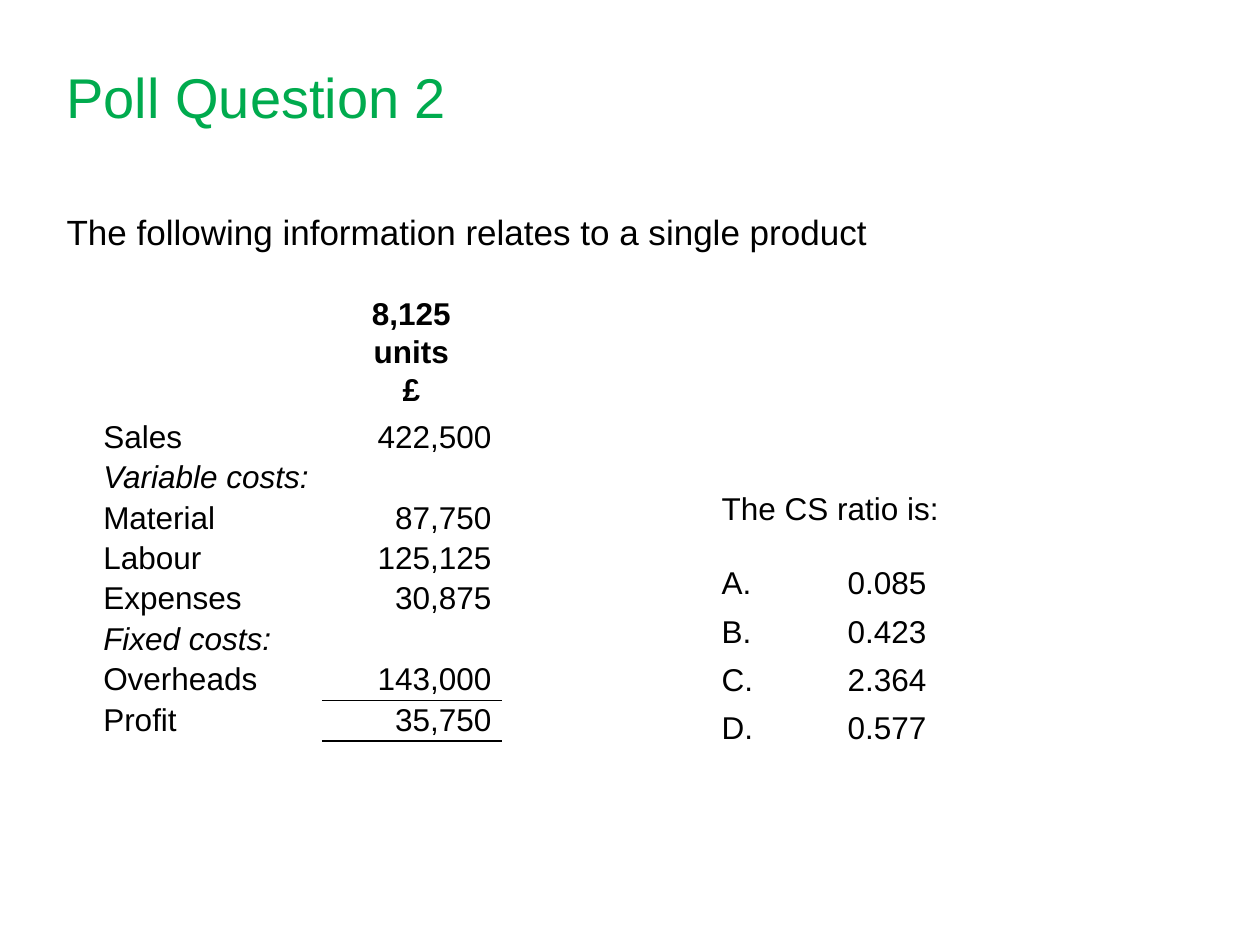
from dataclasses import dataclass

from lxml import etree
from pptx import Presentation
from pptx.dml.color import RGBColor
from pptx.enum.text import MSO_ANCHOR, PP_ALIGN
from pptx.oxml.ns import qn
from pptx.util import Inches, Pt

LEFT, CENTER, RIGHT = PP_ALIGN.LEFT, PP_ALIGN.CENTER, PP_ALIGN.RIGHT
TOP, MIDDLE = MSO_ANCHOR.TOP, MSO_ANCHOR.MIDDLE


@dataclass(frozen=True)
class Theme:
    font: str = "Arial"
    title_color: str = "00AB4E"
    text_color: str = "000000"
    title_size: int = 32
    lead_size: int = 20
    text_size: int = 18
    line_spacing: float = 1.07
    rule_width: int = 1


@dataclass(frozen=True)
class Box:
    left: float
    top: float
    width: float
    height: float

    def lengths(self) -> tuple:
        return tuple(map(Inches, (self.left, self.top, self.width, self.height)))


@dataclass(frozen=True)
class CostLine:
    label: str
    amount: str = ""
    heading: bool = False
    rules: str = ""  # sides of the amount cell that carry a rule: T, B


THEME = Theme()
TITLE_BOX = Box(0.43, 0.13, 9.13, 1.26)
LEAD_BOX = Box(0.43, 1.62, 9.13, 0.5)
ANSWER_BOX = Box(5.63, 3.83, 3.94, 2.17)
COLUMN_WIDTHS = (1.81, 1.42)
HEADER_HEIGHT, ROW_HEIGHT = 0.97, 0.32
TABLE_LEFT, TABLE_TOP = 0.75, 2.34
ANSWER_TAB = 1.0

COST_LINES = (
    CostLine("Sales", "422,500"),
    CostLine("Variable costs:", heading=True),
    CostLine("Material", "87,750"),
    CostLine("Labour", "125,125"),
    CostLine("Expenses", "30,875"),
    CostLine("Fixed costs:", heading=True),
    CostLine("Overheads", "143,000", rules="B"),
    CostLine("Profit", "35,750", rules="TB"),
)
ANSWERS = ("0.085", "0.423", "2.364", "0.577")


def style_font(paragraph, size: int, color: str, bold=False, italic=False) -> None:
    for run in paragraph.runs:
        font = run.font
        font.name, font.size = THEME.font, Pt(size)
        font.bold, font.italic = bold, italic
        font.color.rgb = RGBColor.from_string(color)


def add_text(slide, box: Box, text: str, size: int, color: str, anchor=TOP):
    text_frame = slide.shapes.add_textbox(*box.lengths()).text_frame
    text_frame.word_wrap = True
    text_frame.vertical_anchor = anchor
    text_frame.text = text
    for paragraph in text_frame.paragraphs:
        style_font(paragraph, size, color)
    return text_frame


def add_tab(paragraph, position: float) -> None:
    tab_list = etree.SubElement(paragraph._p.get_or_add_pPr(), qn("a:tabLst"))
    etree.SubElement(tab_list, qn("a:tab"), pos=str(Inches(position)), algn="l")


def add_answers(slide) -> None:
    options = [f"{letter}.\t{value}" for letter, value in zip("ABCD", ANSWERS)]
    text_frame = add_text(slide, ANSWER_BOX, "\n".join(["The CS ratio is:", *options]),
                          THEME.text_size, THEME.text_color)
    question, *choices = text_frame.paragraphs
    question.space_after = Pt(21)
    for choice in choices:
        add_tab(choice, ANSWER_TAB)
        choice.space_after = Pt(6)


def add_rule(cell, side: str) -> None:
    line = etree.SubElement(cell._tc.get_or_add_tcPr(), qn(f"a:ln{side}"),
                            w=str(Pt(THEME.rule_width)))
    fill = etree.SubElement(line, qn("a:solidFill"))
    etree.SubElement(fill, qn("a:srgbClr"), val=THEME.text_color)


def fill_cell(cell, text: str, align, bold=False, italic=False, rules="") -> None:
    for side in rules:
        add_rule(cell, side)
    cell.fill.background()
    cell.margin_left, cell.margin_right = Inches(0.07), Inches(0.08)
    cell.margin_top = cell.margin_bottom = 0
    cell.text_frame.text = text
    for paragraph in cell.text_frame.paragraphs:
        paragraph.alignment = align
        paragraph.line_spacing = THEME.line_spacing
        paragraph.font.size = Pt(THEME.text_size)
        style_font(paragraph, THEME.text_size, THEME.text_color, bold, italic)


def add_cost_table(slide) -> None:
    heights = [HEADER_HEIGHT] + [ROW_HEIGHT] * len(COST_LINES)
    box = Box(TABLE_LEFT, TABLE_TOP, sum(COLUMN_WIDTHS), sum(heights))
    table = slide.shapes.add_table(len(heights), len(COLUMN_WIDTHS), *box.lengths()).table
    table.first_row = table.horz_banding = False
    for column, width in zip(table.columns, COLUMN_WIDTHS):
        column.width = Inches(width)
    for row, height in zip(table.rows, heights):
        row.height = Inches(height)

    fill_cell(table.cell(0, 0), "", LEFT)
    fill_cell(table.cell(0, 1), "8,125 units\n£", CENTER, bold=True)
    for index, line in enumerate(COST_LINES, start=1):
        fill_cell(table.cell(index, 0), line.label, LEFT, italic=line.heading)
        fill_cell(table.cell(index, 1), line.amount, RIGHT, rules=line.rules)


def main() -> None:
    presentation = Presentation()
    presentation.slide_width, presentation.slide_height = Inches(10), Inches(7.5)
    slide = presentation.slides.add_slide(presentation.slide_layouts[6])
    add_text(slide, TITLE_BOX, "Poll Question 2", THEME.title_size,
             THEME.title_color, MIDDLE)
    add_text(slide, LEAD_BOX, "The following information relates to a single product",
             THEME.lead_size, THEME.text_color)
    add_answers(slide)
    add_cost_table(slide)
    presentation.save("out.pptx")


if __name__ == "__main__":
    main()
